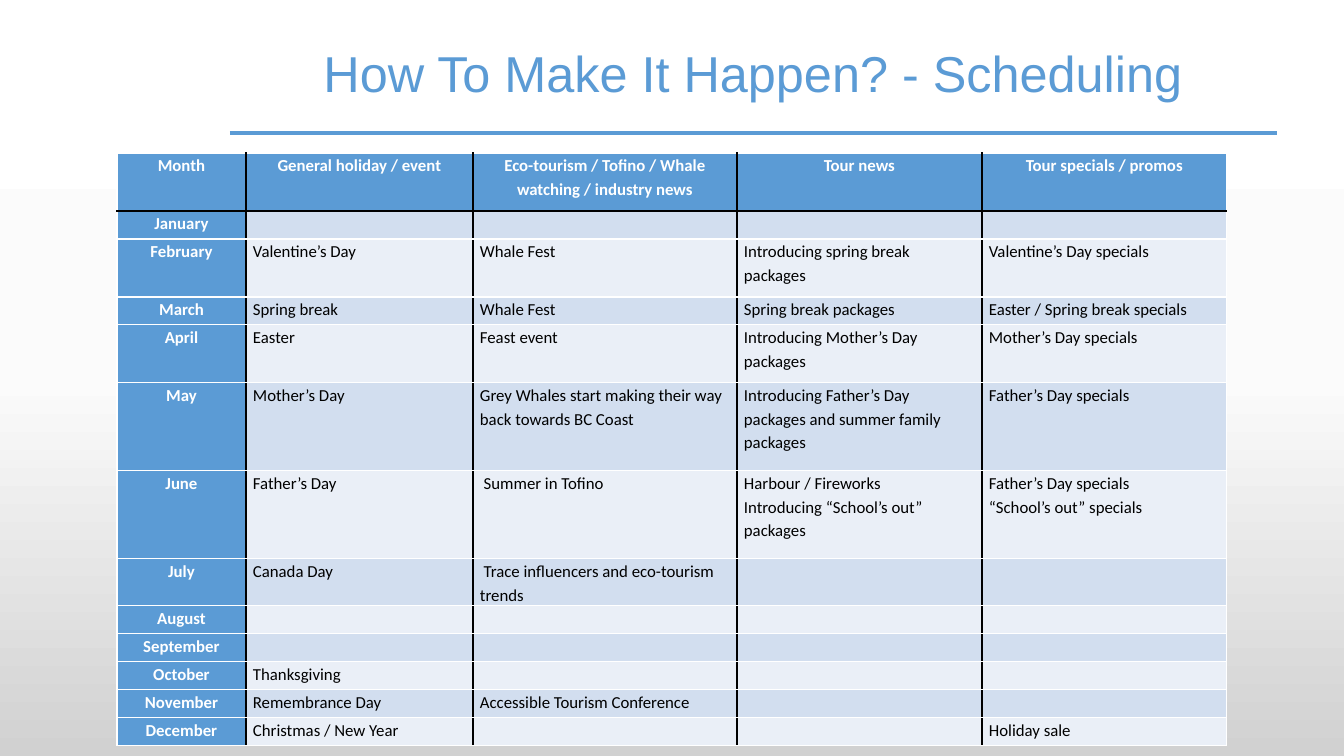
import dataclasses

import lxml.etree
import pptx
import pptx.dml.color
import pptx.enum.shapes
import pptx.enum.text
import pptx.oxml.ns
import pptx.util

EMU_PER_PX = 914400 / 100.8


@dataclasses.dataclass(frozen=True)
class Theme:
    accent: str = "5B9BD5"
    band_dark: str = "D2DEEF"
    band_light: str = "EAEFF7"
    black: str = "000000"
    white: str = "FFFFFF"
    # Position in percent and colour, from top to bottom
    backdrop: tuple = ((0, "FFFFFF"), (50, "FBFBFB"), (100, "D1D1D1"))
    title_font: str = "Arial"
    body_font: str = "Calibri"
    title_size: int = 36
    body_size: int = 12
    rule_width: int = 3
    border_width: int = 1


THEME = Theme()

COLUMN_WIDTHS = [129, 227, 264, 245, 245]
ROW_HEIGHTS = [58, 28, 58, 28, 58, 88, 88] + [28] * 6

SCHEDULE = [
    ["Month", "General holiday / event",
     "Eco-tourism / Tofino / Whale watching / industry news",
     "Tour news", "Tour specials / promos"],
    ["January", "", "", "", ""],
    ["February", "Valentine’s Day", "Whale Fest",
     "Introducing spring break packages", "Valentine’s Day specials"],
    ["March", "Spring break", "Whale Fest", "Spring break packages",
     "Easter / Spring break specials"],
    ["April", "Easter", "Feast event", "Introducing Mother’s Day packages",
     "Mother’s Day specials"],
    ["May", "Mother’s Day",
     "Grey Whales start making their way back towards BC Coast",
     "Introducing Father’s Day packages and summer family packages",
     "Father’s Day specials"],
    ["June", "Father’s Day", " Summer in Tofino",
     "Harbour / Fireworks\nIntroducing “School’s out” packages",
     "Father’s Day specials\n“School’s out” specials"],
    ["July", "Canada Day", " Trace influencers and eco-tourism trends", "", ""],
    ["August", "", "", "", ""],
    ["September", "", "", "", ""],
    ["October", "Thanksgiving", "", "", ""],
    ["November", "Remembrance Day", "Accessible Tourism Conference", "", ""],
    ["December", "Christmas / New Year", "", "", "Holiday sale"],
]


def px(length):
    return pptx.util.Emu(round(length * EMU_PER_PX))


def rgb(color):
    return pptx.dml.color.RGBColor.from_string(color)


def set_all(target, values):
    for name, value in values.items():
        setattr(target, name, value)


def add_element(parent, tag, **attributes):
    """Append a DrawingML element such as a:ln and return it."""
    return lxml.etree.SubElement(parent, pptx.oxml.ns.qn(tag), attributes)


def paint_background(slide):
    fill = slide.background.fill
    fill.gradient()
    fill.gradient_angle = 270
    stops = slide.background._cSld.find(".//" + pptx.oxml.ns.qn("a:gsLst"))
    for stop in list(stops):
        stops.remove(stop)
    for percent, color in THEME.backdrop:
        stop = add_element(stops, "a:gs", pos=str(percent * 1000))
        add_element(stop, "a:srgbClr", val=color)


def add_rule(slide, left, right, y):
    rule = slide.shapes.add_connector(
        pptx.enum.shapes.MSO_CONNECTOR.STRAIGHT, px(left), px(y), px(right), px(y))
    rule.line.color.rgb = rgb(THEME.accent)
    rule.line.width = pptx.util.Pt(THEME.rule_width)
    add_element(rule._element.spPr, "a:effectLst")


def add_title(slide, text, left, top, width, height):
    box = slide.shapes.add_textbox(px(left), px(top), px(width), px(height))
    set_all(box.text_frame, {
        "word_wrap": True,
        "vertical_anchor": pptx.enum.text.MSO_ANCHOR.BOTTOM,
        "text": text,
    })
    paragraph = box.text_frame.paragraphs[0]
    set_all(paragraph, {"alignment": pptx.enum.text.PP_ALIGN.CENTER, "line_spacing": 0.9})
    font = paragraph.runs[0].font
    set_all(font, {"name": THEME.title_font, "size": pptx.util.Pt(THEME.title_size)})
    font.color.rgb = rgb(THEME.accent)


def set_borders(cell, colors):
    """Draw the borders; colors maps L, R, T and B to a colour, in that order."""
    properties = cell._tc.get_or_add_tcPr()
    for position, (side, color) in enumerate(colors.items()):
        line = add_element(properties, f"a:ln{side}",
                           w=str(pptx.util.Pt(THEME.border_width)))
        add_element(add_element(line, "a:solidFill"), "a:srgbClr", val=color)
        properties.insert(position, line)


def write_cell(cell, text, is_heading):
    set_all(cell, {"text": text, "margin_left": px(7), "margin_right": px(7),
                   "margin_top": 0, "margin_bottom": 0})
    for paragraph in cell.text_frame.paragraphs:
        paragraph.line_spacing = 1.15
        if is_heading:
            paragraph.alignment = pptx.enum.text.PP_ALIGN.CENTER
        for run in paragraph.runs:
            set_all(run.font, {"name": THEME.body_font, "bold": is_heading,
                               "size": pptx.util.Pt(THEME.body_size)})
            run.font.color.rgb = rgb(THEME.white if is_heading else THEME.black)
        if not paragraph.runs:
            # Keeps an empty cell from stretching its row
            add_element(paragraph._p, "a:endParaRPr", sz=str(THEME.body_size * 100))


def add_schedule(slide, left, top):
    row_count, column_count = len(SCHEDULE), len(COLUMN_WIDTHS)
    table = slide.shapes.add_table(
        row_count, column_count, px(left), px(top),
        px(sum(COLUMN_WIDTHS)), px(sum(ROW_HEIGHTS))).table
    table.first_col = True
    for column, width in zip(table.columns, COLUMN_WIDTHS):
        column.width = px(width)
    for row, height in zip(table.rows, ROW_HEIGHTS):
        row.height = px(height)

    for row_index, texts in enumerate(SCHEDULE):
        band = THEME.band_dark if row_index % 2 else THEME.band_light
        for column_index, text in enumerate(texts):
            cell = table.cell(row_index, column_index)
            is_heading = row_index == 0 or column_index == 0
            write_cell(cell, text, is_heading)
            cell.fill.solid()
            cell.fill.fore_color.rgb = rgb(THEME.accent if is_heading else band)
            is_last_column = column_index == column_count - 1
            set_borders(cell, {
                "L": THEME.white if column_index == 0 else THEME.black,
                "R": THEME.white if is_last_column else THEME.black,
                "T": THEME.black if row_index == 1 else THEME.white,
                "B": THEME.black if row_index == 0 else THEME.white,
            })


def main():
    presentation = pptx.Presentation()
    set_all(presentation, {"slide_width": px(1344), "slide_height": px(756)})
    slide = presentation.slides.add_slide(presentation.slide_layouts[6])
    paint_background(slide)
    add_rule(slide, 230, 1277, 133)
    add_title(slide, "How To Make It Happen? - Scheduling", 230, 20, 1046, 88)
    add_schedule(slide, 117, 153)
    presentation.save("out.pptx")


if __name__ == "__main__":
    main()
